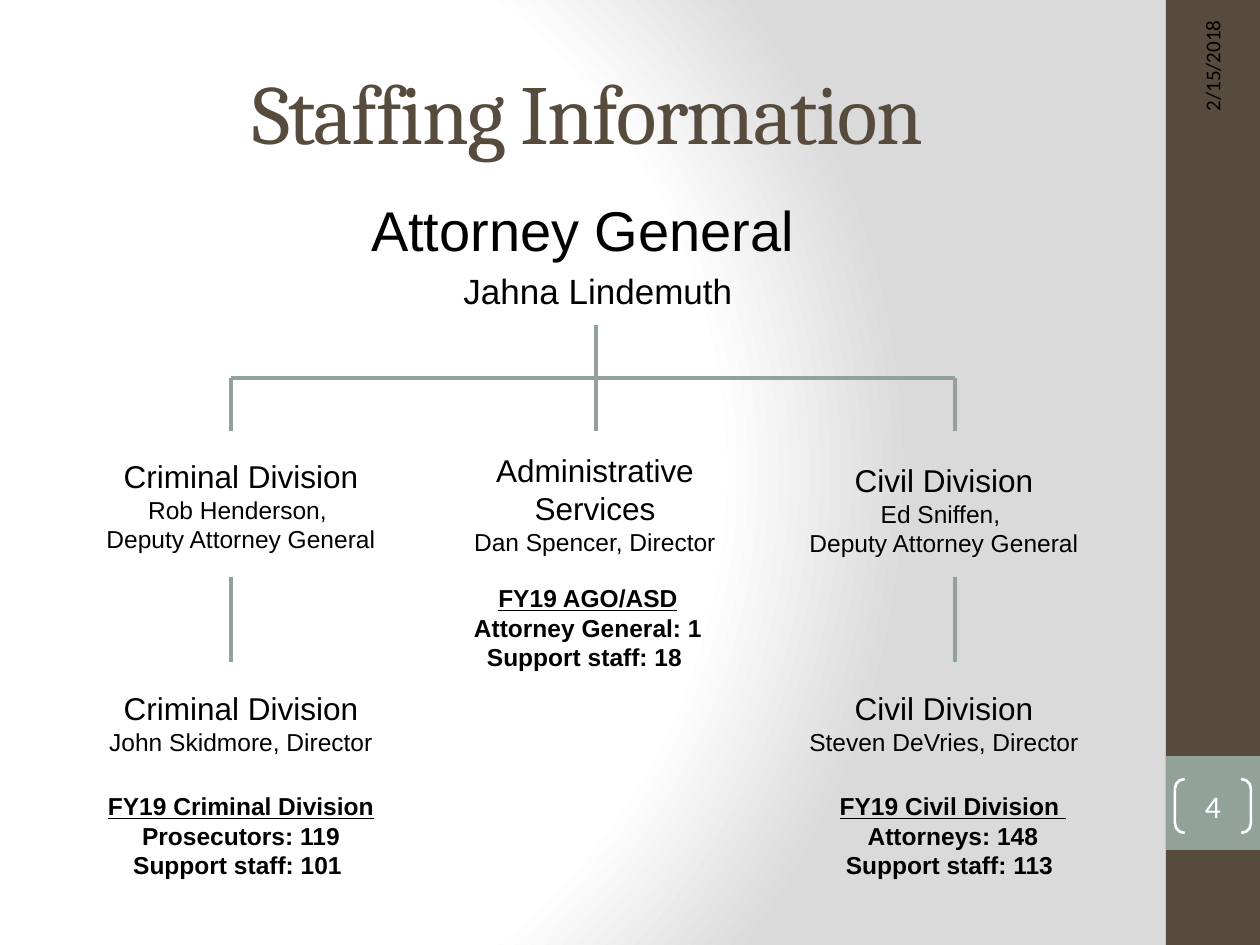
"""Build the Staffing Information organisation chart slide."""
from pptx import Presentation
from pptx.dml.color import RGBColor
from pptx.enum.shapes import MSO_CONNECTOR, MSO_SHAPE
from pptx.enum.text import MSO_ANCHOR, PP_ALIGN
from pptx.oxml import parse_xml
from pptx.oxml.ns import qn
from pptx.util import Pt

PX = 914400 // 126
STRAIGHT = MSO_CONNECTOR.STRAIGHT
RECTANGLE, BRACKETS = MSO_SHAPE.RECTANGLE, MSO_SHAPE.DOUBLE_BRACKET
CENTER, RIGHT = PP_ALIGN.CENTER, PP_ALIGN.RIGHT
TOP, MIDDLE = MSO_ANCHOR.TOP, MSO_ANCHOR.MIDDLE
COLORS = {"brown": "564B3C", "sage": "93A299", "white": "FFFFFF",
          "black": "000000", "gray": "DADADA"}
BACKGROUND_STOPS = [(0, "white"), (75, "white"), (100, "gray")]

TITLE = "Staffing Information"
HEAD = [("Attorney General", 32, 48), ("Jahna Lindemuth", 20, 78)]
DATE, NUMBER = "2/15/2018", "4"

DIVISIONS = [
    (241, 451, 314, ["Criminal Division", "Rob Henderson, ", "Deputy Attorney General"]),
    (595, 445, 314, ["Administrative Services", "Dan Spencer, Director"]),
    (944, 455, 314, ["Civil Division", "Ed Sniffen, ", "Deputy Attorney General"]),
    (241, 683, 350, ["Criminal Division", "John Skidmore, Director"]),
    (944, 683, 350, ["Civil Division", "Steven DeVries, Director"]),
]
COUNTS = [
    (241, 785, 372, ["FY19 Criminal Division", "Prosecutors: 119", "Support staff: 101 "]),
    (588, 577, 400, ["FY19 AGO/ASD", "Attorney General: 1", "Support staff: 18 "]),
    (953, 785, 372, ["FY19 Civil Division ", "Attorneys: 148", "Support staff: 113 "]),
]
LEFT_X, MIDDLE_X, RIGHT_X = 231, 596, 955
HEAD_Y, BAR_Y, BRANCH_Y = 325, 378, 431
LOWER_TOP, LOWER_END = 577, 662
LINES = [(LEFT_X, BAR_Y, RIGHT_X, BAR_Y), (MIDDLE_X, HEAD_Y, MIDDLE_X, BAR_Y)]
LINES += [(x, BAR_Y, x, BRANCH_Y) for x in (LEFT_X, MIDDLE_X, RIGHT_X)]
LINES += [(x, LOWER_TOP, x, LOWER_END) for x in (LEFT_X, RIGHT_X)]


def emu(*lengths):
    return [length * PX for length in lengths]


def rgb(name):
    return RGBColor.from_string(COLORS[name])


def set_background(page):
    page.background.fill.solid()
    solid = page.background._cSld.bg.bgPr.find(qn("a:solidFill"))
    stops = "".join(f'<a:gs pos="{pos * 1000}"><a:srgbClr val="{COLORS[name]}"/></a:gs>'
                    for pos, name in BACKGROUND_STOPS)
    gradient = parse_xml(
        '<a:gradFill xmlns:a="http://schemas.openxmlformats.org/drawingml/2006/main" '
        f'rotWithShape="1"><a:gsLst>{stops}</a:gsLst><a:path path="circle">'
        '<a:fillToRect l="20000" t="50000" r="100000" b="50000"/></a:path></a:gradFill>')
    solid.getparent().replace(solid, gradient)


def add_panel(page, place, color):
    panel = page.shapes.add_shape(RECTANGLE, *emu(*place))
    panel.shadow.inherit = False
    panel.fill.solid()
    panel.fill.fore_color.rgb = rgb(color)
    panel.line.fill.background()


def add_line(page, ends):
    line = page.shapes.add_connector(STRAIGHT, *emu(*ends))
    line.line.color.rgb = rgb("sage")
    line.line.width = Pt(2)
    line._element.spPr.append(line._element.spPr.makeelement(qn("a:effectLst"), {}))


def write(frame, texts, sizes, font="Arial", color="black", align=CENTER, anchor=TOP):
    frame.word_wrap = True
    frame.vertical_anchor = anchor
    for index, (text, size) in enumerate(zip(texts, sizes)):
        para = frame.paragraphs[0] if index == 0 else frame.add_paragraph()
        para.text = text
        para.alignment = align
        para.font.name, para.font.size = font, Pt(size)
        para.font.color.rgb = rgb(color)
    return frame.paragraphs


def add_text(page, place, texts, sizes, **style):
    box = page.shapes.add_textbox(*emu(*place))
    return box, write(box.text_frame, texts, sizes, **style)


def add_centered(page, entry, first_size):
    center, top, width, texts = entry
    place = (center - width // 2, top, width, 34 + 29 * (len(texts) - 1))
    sizes = [first_size] + [14] * (len(texts) - 1)
    return add_text(page, place, texts, sizes)[1]


def add_slide_number(page):
    badge = page.shapes.add_shape(BRACKETS, *emu(1175, 779, 76, 54))
    badge.adjustments[0] = 0.18
    badge.shadow.inherit = False
    badge.fill.background()
    badge.line.color.rgb = rgb("white")
    badge.line.width = Pt(1.5)
    frame = badge.text_frame
    frame.margin_left = frame.margin_right = frame.margin_top = frame.margin_bottom = 0
    write(frame, [NUMBER], [18], font="Calibri", color="white", anchor=MIDDLE)


def main():
    deck = Presentation()
    deck.slide_width, deck.slide_height = emu(1260, 945)
    page = deck.slides.add_slide(deck.slide_layouts[6])
    set_background(page)
    add_panel(page, (1166, 0, 94, 945), "brown")
    add_panel(page, (1166, 756, 94, 94), "sage")

    title = add_text(page, (63, 32, 1050, 158), [TITLE], [48],
                     font="Cambria", color="brown", anchor=MIDDLE)[1][0]
    title.runs[0]._r.get_or_add_rPr().set("spc", "-100")

    names, sizes, margins = zip(*HEAD)
    head = add_text(page, (50, 189, 1050, 130), names, sizes)[1]
    for para, margin in zip(head, margins):
        para.space_before = Pt(4)
        properties = para._p.get_or_add_pPr()
        properties.set("marL", str(margin * PX))
        properties.set("indent", str(-32 * PX))

    date = add_text(page, (1012, 183, 400, 50), [DATE], [12],
                    font="Calibri", align=RIGHT, anchor=MIDDLE)[0]
    date.rotation = 270
    add_slide_number(page)

    for ends in LINES:
        add_line(page, ends)
    for entry in DIVISIONS:
        add_centered(page, entry, 18)
    for entry in COUNTS:
        paragraphs = add_centered(page, entry, 14)
        for para in paragraphs:
            para.font.bold = True
        paragraphs[0].font.underline = True
    deck.save("out.pptx")


if __name__ == "__main__":
    main()
